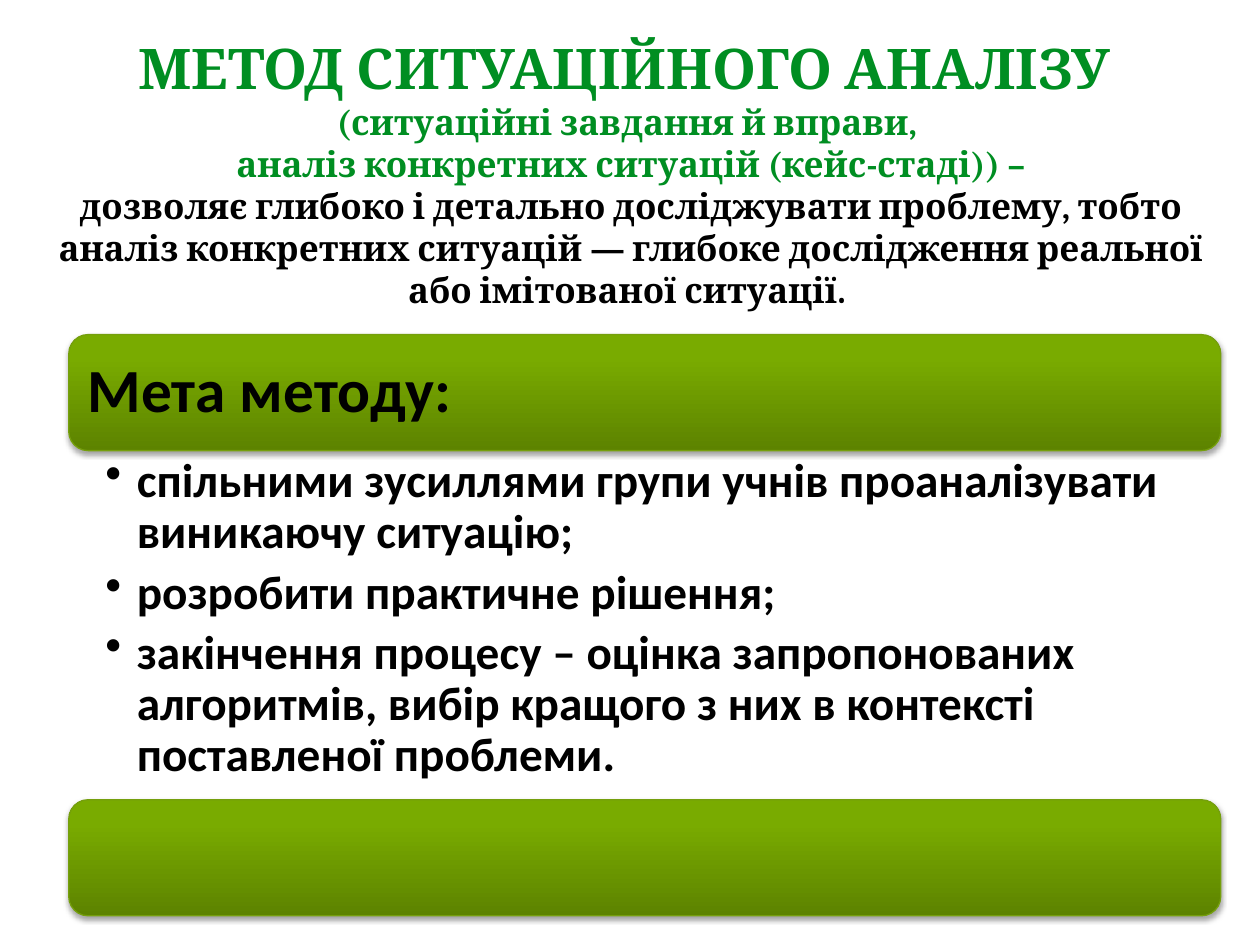
from dataclasses import dataclass

from lxml import etree
from pptx import Presentation
from pptx.dml.color import RGBColor
from pptx.enum.shapes import MSO_SHAPE
from pptx.enum.text import MSO_ANCHOR, PP_ALIGN
from pptx.oxml import parse_xml
from pptx.oxml.ns import nsdecls, qn
from pptx.util import Pt

ROUNDED = MSO_SHAPE.ROUNDED_RECTANGLE
MIDDLE = MSO_ANCHOR.MIDDLE
LEFT, CENTER = PP_ALIGN.LEFT, PP_ALIGN.CENTER

BLACK = RGBColor(0x00, 0x00, 0x00)
TITLE_GREEN = RGBColor(0x00, 0x8E, 0x22)
BAR_DARK = RGBColor(0x5D, 0x83, 0x00)
BAR_LIGHT = RGBColor(0x79, 0xAB, 0x00)
BAR_LINE = RGBColor(0x75, 0x9F, 0x0D)

BLOCK_LEFT, BLOCK_WIDTH = 39.3, 658.3
BAR_HEIGHT = 66.3
GOALS_TOP, GOALS_HEIGHT = 257.4, 199.4
BULLET_INDENT = 18


@dataclass
class TitlePart:
    lines: list[str]
    size: float
    color: RGBColor


@dataclass
class Bar:
    top: float
    text: str = ""


TITLE = [
    TitlePart(["МЕТОД СИТУАЦІЙНОГО АНАЛІЗУ "], 32, TITLE_GREEN),
    TitlePart(["(ситуаційні завдання й вправи, ",
               "аналіз конкретних ситуацій (кейс-стаді)) –"], 20, TITLE_GREEN),
    TitlePart(["дозволяє глибоко і детально досліджувати проблему, тобто аналіз "
               "конкретних ситуацій — глибоке дослідження реальної або імітованої "
               "ситуації. "], 20, BLACK),
]
BARS = [Bar(191.2, "Мета методу:"), Bar(457)]
GOALS = [
    "спільними зусиллями групи учнів проаналізувати виникаючу ситуацію;",
    "розробити практичне рішення;",
    "закінчення процесу – оцінка запропонованих алгоритмів, вибір кращого з них "
    "в контексті поставленої проблеми.",
]


def style_font(font, name: str, size: float, color: RGBColor) -> None:
    font.name = name
    font.size = Pt(size)
    font.bold = True
    font.color.rgb = color


def add_title(slide, parts: list[TitlePart]) -> None:
    box = slide.shapes.add_textbox(Pt(11.5), Pt(0), Pt(697.7), Pt(196.6))
    frame = box.text_frame
    frame.word_wrap = True
    frame.vertical_anchor = MIDDLE
    paragraph = frame.paragraphs[0]
    paragraph.alignment = CENTER
    lines = [(line, part) for part in parts for line in part.lines]
    for index, (line, part) in enumerate(lines):
        if index:
            paragraph.add_line_break()
        run = paragraph.add_run()
        run.text = line
        style_font(run.font, "Cambria", part.size, part.color)


def add_soft_shadow(shape) -> None:
    shape.shadow.inherit = False
    effects = shape._element.spPr.find(qn("a:effectLst"))
    effects.append(parse_xml(
        f'<a:outerShdw {nsdecls("a")} blurRad="{Pt(3.1)}" dist="{Pt(1.8)}" '
        'dir="5400000" rotWithShape="0"><a:srgbClr val="000000">'
        '<a:alpha val="35000"/></a:srgbClr></a:outerShdw>'))


def add_bar(slide, bar: Bar) -> None:
    shape = slide.shapes.add_shape(
        ROUNDED, Pt(BLOCK_LEFT), Pt(bar.top), Pt(BLOCK_WIDTH), Pt(BAR_HEIGHT))
    shape.fill.gradient()
    shape.fill.gradient_angle = 90
    dark, light = shape.fill.gradient_stops
    dark.color.rgb, dark.position = BAR_DARK, 0
    light.color.rgb, light.position = BAR_LIGHT, 0.8
    shape.line.color.rgb = BAR_LINE
    shape.line.width = Pt(0.75)
    add_soft_shadow(shape)
    if bar.text:
        frame = shape.text_frame
        frame.text = bar.text
        frame.margin_left = Pt(7.6)
        frame.vertical_anchor = MIDDLE
        paragraph = frame.paragraphs[0]
        paragraph.alignment = LEFT
        paragraph.line_spacing = 0.9
        style_font(paragraph.runs[0].font, "Calibri", 35, BLACK)


def add_bullet(paragraph) -> None:
    properties = paragraph._p.get_or_add_pPr()
    properties.set("marL", str(Pt(BULLET_INDENT)))
    properties.set("indent", str(-Pt(BULLET_INDENT)))
    etree.SubElement(properties, qn("a:buChar")).set("char", "•")


def add_goals(slide, goals: list[str]) -> None:
    box = slide.shapes.add_textbox(
        Pt(BLOCK_LEFT), Pt(GOALS_TOP), Pt(BLOCK_WIDTH), Pt(GOALS_HEIGHT))
    frame = box.text_frame
    frame.word_wrap = True
    frame.margin_left, frame.margin_right = Pt(20.9), Pt(19.4)
    frame.text = "\n".join(goals)
    for paragraph in frame.paragraphs:
        add_bullet(paragraph)
        paragraph.line_spacing = 0.9
        paragraph.space_after = Pt(5.4)
        style_font(paragraph.runs[0].font, "Calibri", 27, BLACK)


def main() -> None:
    presentation = Presentation()
    presentation.slide_width, presentation.slide_height = Pt(720), Pt(540)
    slide = presentation.slides.add_slide(presentation.slide_layouts[6])
    add_title(slide, TITLE)
    for bar in BARS:
        add_bar(slide, bar)
    add_goals(slide, GOALS)
    presentation.save("out.pptx")


if __name__ == "__main__":
    main()
